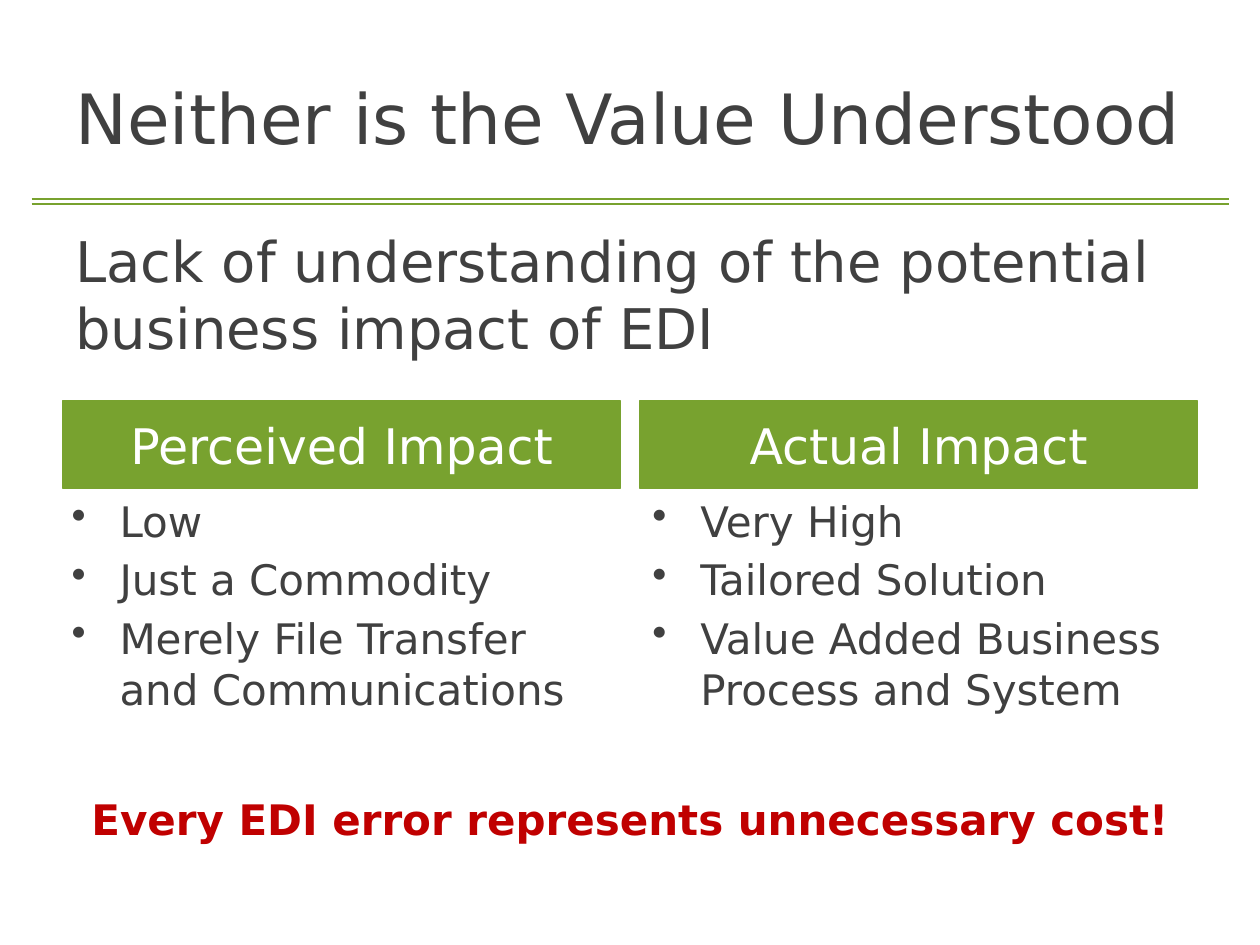
"""Build the slide on the perceived and actual impact of EDI."""
from lxml import etree
from pptx import Presentation
from pptx.dml.color import RGBColor
from pptx.enum.shapes import MSO_CONNECTOR, MSO_SHAPE
from pptx.enum.text import MSO_ANCHOR, PP_ALIGN
from pptx.oxml.ns import qn
from pptx.util import Pt

SCALE = 9144
FONT = "DejaVu Sans"
GREEN = RGBColor(0x78, 0xA2, 0x2F)
GREY = RGBColor(0x40, 0x40, 0x40)
RED = RGBColor(0xC0, 0x00, 0x00)
WHITE = RGBColor(0xFF, 0xFF, 0xFF)
STRAIGHT = MSO_CONNECTOR.STRAIGHT
RECT = MSO_SHAPE.RECTANGLE
TOP, MIDDLE = MSO_ANCHOR.TOP, MSO_ANCHOR.MIDDLE
LEFT, CENTER = PP_ALIGN.LEFT, PP_ALIGN.CENTER


def px(*sizes):
    """Turn px into EMU."""
    return [size * SCALE for size in sizes]


class Board:
    """Holds the style and the current slide."""

    def __init__(self, deck):
        self.slide = deck.slides.add_slide(deck.slide_layouts[6])
        self.shapes = self.slide.shapes

    def fill(self, frame, lines, size, color=GREY, align=LEFT,
             anchor=TOP, bold=False, bullet=False):
        """Fill a text frame with styled paragraphs."""
        frame.word_wrap = True
        frame.vertical_anchor = anchor
        for i, line in enumerate(lines):
            para = frame.add_paragraph() if i else frame.paragraphs[0]
            para.text = line
            para.alignment = align
            if i:
                para.space_before = Pt(size * 0.2)
            if bullet:
                props = para._p.get_or_add_pPr()
                indent, = px(38)
                props.set("marL", str(indent))
                props.set("indent", str(-indent))
                etree.SubElement(props, qn("a:buChar")).set("char", "•")
            font = para.font
            font.name, font.size, font.bold = FONT, Pt(size), bold
            font.color.rgb = color

    def text(self, box, lines, size, **style):
        """Add a text box."""
        self.fill(self.shapes.add_textbox(*px(*box)).text_frame,
                  lines, size, **style)

    def banner(self, box, label):
        """Add a filled heading bar."""
        bar = self.shapes.add_shape(RECT, *px(*box))
        bar.shadow.inherit = False
        bar.fill.solid()
        bar.fill.fore_color.rgb = GREEN
        bar.line.color.rgb = GREEN
        bar.line.width = Pt(0.75)
        self.fill(bar.text_frame, [label], 28, color=WHITE,
                  align=CENTER, anchor=MIDDLE)

    def rule(self, y):
        """Add a line across the slide."""
        line = self.shapes.add_connector(STRAIGHT, *px(25, y, 975, y))
        line.line.color.rgb = GREEN
        line.line.width = Pt(1.5)
        etree.SubElement(line._element.spPr, qn("a:effectLst"))


def main():
    """Build and save the slide."""
    deck = Presentation()
    deck.slide_width, deck.slide_height = px(1000, 750)
    board = Board(deck)
    for y in (158, 162):
        board.rule(y)
    board.text((50, 30, 942, 125), ["Neither is the Value Understood"],
               39.6, anchor=MIDDLE)
    board.text((50, 175, 900, 167),
               ["Lack of understanding of the potential business impact of EDI"],
               32)
    columns = [
        (50, 47, "Perceived Impact",
         ["Low", "Just a Commodity",
          "Merely File Transfer and Communications"]),
        (508, 508, "Actual Impact",
         ["Very High", "Tailored Solution",
          "Value Added Business Process and System"]),
    ]
    for bar, left, label, points in columns:
        board.banner((bar, 318, 442, 70), label)
        board.text((left, 388, 442, 229), points, 24, bullet=True)
    board.text((50, 625, 900, 58),
               ["Every EDI error represents unnecessary cost!"], 24,
               color=RED, align=CENTER, bold=True)
    deck.save("out.pptx")


if __name__ == "__main__":
    main()
